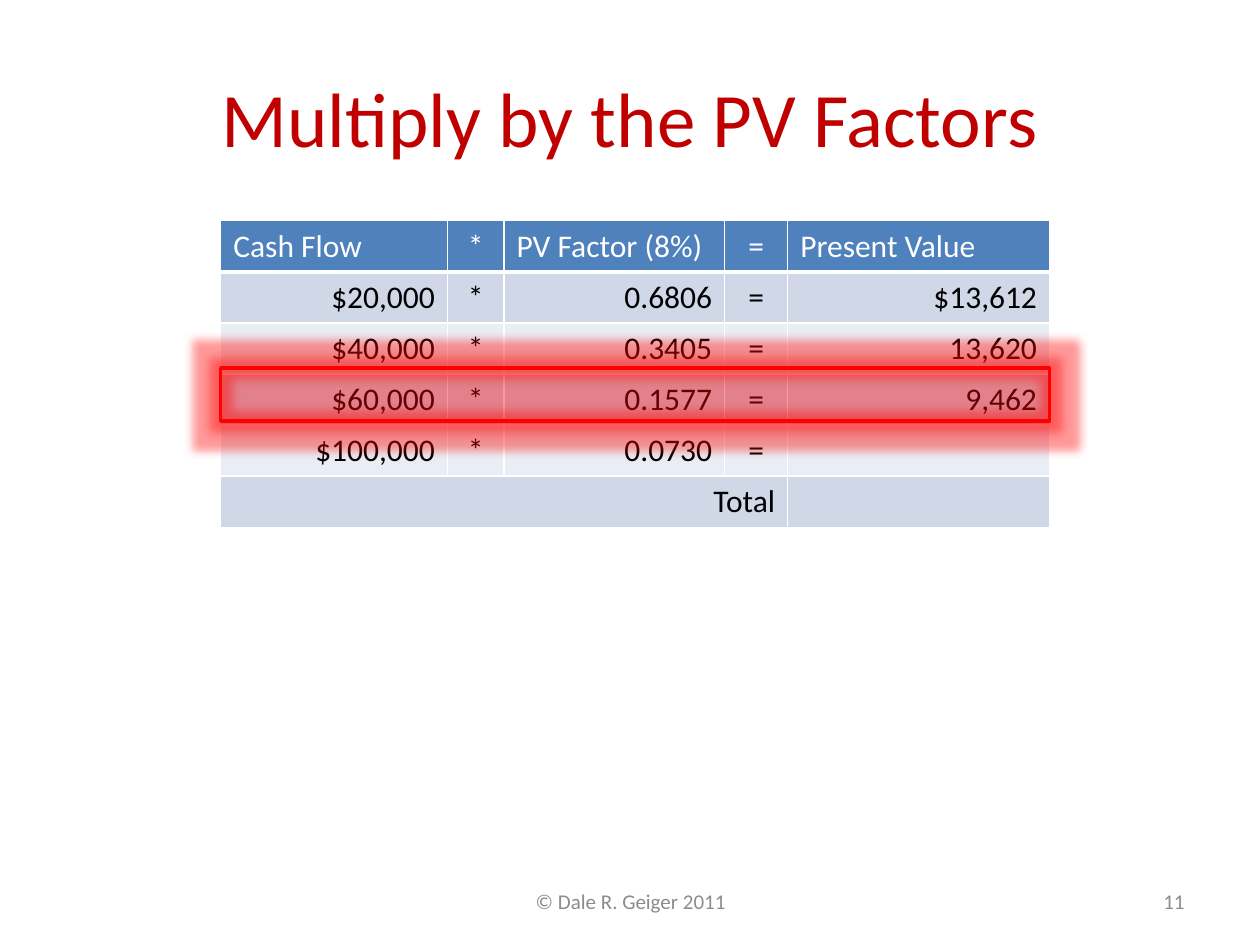
"""Build a slide that multiplies cash flows by their present value factors."""
from dataclasses import dataclass

from lxml import etree
from pptx import Presentation
from pptx import util as u
from pptx.dml.color import RGBColor
from pptx.enum import shapes, text
from pptx.oxml import ns

LEFT, CENTER, RIGHT = text.PP_ALIGN.LEFT, text.PP_ALIGN.CENTER, text.PP_ALIGN.RIGHT
WHITE, BLACK, RED, GRAY = "FFFFFF", "000000", "FF0000", "8C8C8C"
HEADER_FILL, BANDS = "4F81BD", ("D0D8E8", "E9EDF4")
TABLE_LEFT, TABLE_TOP, ROW_HEIGHT = 4.45, 4.45, 1.03


@dataclass
class Column:
    header: str
    width: float
    header_align: int
    align: int


@dataclass
class Footer:
    label: str
    left: float
    width: float
    align: int


COLUMNS = [
    Column("Cash Flow", 4.57, LEFT, RIGHT),
    Column("*", 1.14, CENTER, CENTER),
    Column("PV Factor (8%)", 4.45, LEFT, RIGHT),
    Column("=", 1.27, CENTER, CENTER),
    Column("Present Value", 5.28, LEFT, RIGHT),
]
FLOWS = [
    ("$20,000", "0.6806", "$13,612"),
    ("$40,000", "0.3405", "13,620"),
    ("$60,000", "0.1577", "9,462"),
    ("$100,000", "0.0730", ""),
]
FOOTERS = [
    Footer("© Dale R. Geiger 2011", 8.69, 8.05, CENTER),
    Footer("11", 18.21, 5.92, RIGHT),
]
TABLE_WIDTH = sum(c.width for c in COLUMNS)


def rgb(value: str) -> RGBColor:
    return RGBColor.from_string(value)


def write(tf, content: str, *, size: float = 18, color: str = BLACK, align: int = LEFT) -> None:
    p = tf.paragraphs[0]
    p.alignment = align
    p.font.size = u.Pt(size)
    if content:
        r = p.add_run()
        r.text = content
        r.font.name = "Calibri"
        r.font.size = u.Pt(size)
        r.font.bold = False
        r.font.color.rgb = rgb(color)


def add_borders(cell, bottom: float) -> None:
    tc_pr = cell._tc.get_or_add_tcPr()
    for i, side in enumerate("LRTB"):
        width = u.Pt(bottom if side == "B" else 1)
        ln = etree.Element(ns.qn(f"a:ln{side}"), w=str(width))
        fill = etree.SubElement(ln, ns.qn("a:solidFill"))
        etree.SubElement(fill, ns.qn("a:srgbClr"), val=WHITE)
        tc_pr.insert(i, ln)


def fill_cell(cell, content: str, fill: str, color: str, align: int, bottom: float = 1) -> None:
    cell.fill.solid()
    cell.fill.fore_color.rgb = rgb(fill)
    write(cell.text_frame, content, color=color, align=align)
    add_borders(cell, bottom)


def add_cash_flow_table(s) -> None:
    rows = [(flow, "*", factor, "=", value) for flow, factor, value in FLOWS]
    rows.append(("Total", "", "", "", ""))
    count = len(rows) + 1
    table = s.shapes.add_table(count, len(COLUMNS), u.Cm(TABLE_LEFT), u.Cm(TABLE_TOP),
                               u.Cm(TABLE_WIDTH), u.Cm(ROW_HEIGHT * count)).table
    for row in table.rows:
        row.height = u.Cm(ROW_HEIGHT)
    for j, column in enumerate(COLUMNS):
        table.columns[j].width = u.Cm(column.width)
        fill_cell(table.cell(0, j), column.header, HEADER_FILL, WHITE, column.header_align, 3)
        for i, row in enumerate(rows):
            align = RIGHT if i == len(rows) - 1 else column.align
            fill_cell(table.cell(i + 1, j), row[j], BANDS[i % 2], BLACK, align)
    table.cell(count - 1, 0).merge(table.cell(count - 1, 3))


def add_row_highlight(s) -> None:
    sp = s.shapes.add_shape(shapes.MSO_SHAPE.RECTANGLE, u.Cm(TABLE_LEFT), u.Cm(7.42),
                            u.Cm(TABLE_WIDTH), u.Cm(1.07))
    sp.fill.background()
    sp.line.color.rgb = rgb(RED)
    sp.line.width = u.Pt(2)
    sp.shadow.inherit = False
    effects = sp._element.spPr.find(ns.qn("a:effectLst"))
    glow = etree.SubElement(effects, ns.qn("a:glow"), rad=str(u.Pt(11)))
    color = etree.SubElement(glow, ns.qn("a:srgbClr"), val=RED)
    etree.SubElement(color, ns.qn("a:alpha"), val="40000")


def add_footer(s, footer: Footer) -> None:
    sp = s.shapes.add_textbox(u.Cm(footer.left), u.Cm(17.65), u.Cm(footer.width), u.Cm(1.02))
    tf = sp.text_frame
    tf.word_wrap = True
    tf.vertical_anchor = text.MSO_ANCHOR.MIDDLE
    write(tf, footer.label, size=12, color=GRAY, align=footer.align)


def main() -> None:
    prs = Presentation()
    prs.slide_width, prs.slide_height = u.Cm(25.4), u.Cm(19.05)
    s = prs.slides.add_slide(prs.slide_layouts[5])
    title = s.shapes.title
    title.left, title.top, title.width, title.height = map(u.Cm, (1.27, 0.76, 22.86, 3.18))
    title.text_frame.vertical_anchor = text.MSO_ANCHOR.MIDDLE
    write(title.text_frame, "Multiply by the PV Factors", size=44, color="C00000", align=CENTER)
    add_cash_flow_table(s)
    for footer in FOOTERS:
        add_footer(s, footer)
    add_row_highlight(s)
    prs.save("out.pptx")


if __name__ == "__main__":
    main()
